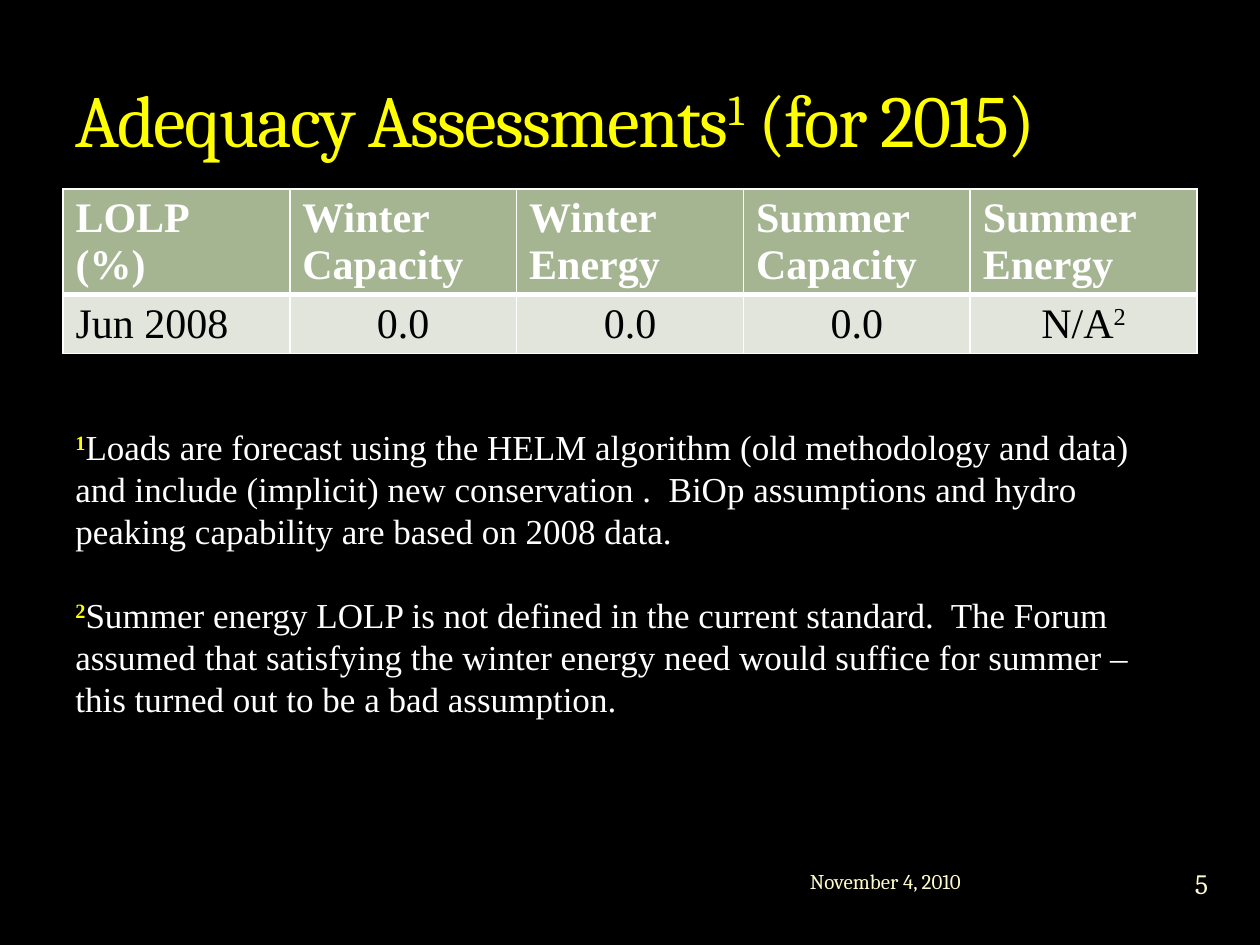
from dataclasses import dataclass

from lxml.etree import SubElement
from pptx import Presentation
from pptx.dml.color import RGBColor
from pptx.enum.text import MSO_ANCHOR, MSO_AUTO_SIZE, PP_ALIGN
from pptx.oxml import parse_xml
from pptx.oxml.ns import nsdecls, qn
from pptx.util import Inches, Pt


@dataclass(frozen=True)
class Theme:
    back: str = "000000"
    white: str = "FFFFFF"
    gold: str = "FFFF00"
    cream: str = "FEFAC9"
    head: str = "A5B592"
    band: str = "E1E5DC"
    serif: str = "Times New Roman"
    sans: str = "Cambria"
    title: int = 42
    cell: int = 24
    note: int = 20
    page: int = 16
    date: int = 12


@dataclass(frozen=True)
class Style:
    face: str
    size: int
    color: str
    bold: bool = False


@dataclass(frozen=True)
class Box:
    left: float
    top: float
    width: float
    height: float

    def spans(self) -> list:
        return [Inches(n) for n in (self.left, self.top, self.width, self.height)]


@dataclass(frozen=True)
class Note:
    mark: str
    text: str


THEME = Theme()
HEADS = ["LOLP\n(%)", "Winter Capacity", "Winter Energy", "Summer Capacity", "Summer Energy"]
VALUES = ["Jun 2008", "0.0", "0.0", "0.0", "N/A"]
NOTES = [
    Note("1", "Loads are forecast using the HELM algorithm (old methodology and data) "
              "and include (implicit) new conservation .  BiOp assumptions and hydro "
              "peaking capability are based on 2008 data."),
    Note("2", "Summer energy LOLP is not defined in the current standard.  The Forum "
              "assumed that satisfying the winter energy need would suffice for summer – "
              "this turned out to be a bad assumption."),
]


def paint(font, style: Style) -> None:
    font.name = style.face
    font.size = Pt(style.size)
    font.bold = style.bold
    font.color.rgb = RGBColor.from_string(style.color)


def add_run(para, text: str, raised: bool = False):
    run = para.add_run()
    run.text = text
    if raised:
        run._r.get_or_add_rPr().set("baseline", "30000")
    return run


def add_box(slide, box: Box, grow: bool = False):
    frame = slide.shapes.add_textbox(*box.spans()).text_frame
    frame.word_wrap = True
    if grow:
        frame.auto_size = MSO_AUTO_SIZE.SHAPE_TO_FIT_TEXT
    else:
        frame.vertical_anchor = MSO_ANCHOR.MIDDLE
    return frame


def edge(cell, widths: dict) -> None:
    props = cell._tc.get_or_add_tcPr()
    for spot, (side, width) in enumerate(widths.items()):
        line = parse_xml(f'<a:ln{side} {nsdecls("a")} w="{Pt(width)}"/>')
        fill = SubElement(line, qn("a:solidFill"))
        SubElement(fill, qn("a:srgbClr"), val=THEME.white)
        props.insert(spot, line)


def draw_title(slide) -> None:
    title = slide.shapes.title
    title.left, title.top, title.width, title.height = Box(0.5, 0.42, 9, 0.92).spans()
    frame = title.text_frame
    frame.auto_size = MSO_AUTO_SIZE.NONE
    frame.vertical_anchor = MSO_ANCHOR.BOTTOM
    para = frame.paragraphs[0]
    para.alignment = PP_ALIGN.LEFT
    paint(para.font, Style(THEME.sans, THEME.title, THEME.gold))
    for text, raised in (("Adequacy Assessments", False), ("1", True), (" (for 2015)", False)):
        run = add_run(para, text, raised)
        run._r.get_or_add_rPr().set("spc", "-100")


def draw_table(slide) -> None:
    table = slide.shapes.add_table(2, len(HEADS), *Box(0.5, 1.5, 9, 1.28).spans()).table
    for row, height in zip(table.rows, (0.82, 0.46)):
        row.height = Inches(height)
    head = Style(THEME.serif, THEME.cell, THEME.white, True)
    body = Style(THEME.serif, THEME.cell, THEME.back)
    looks = (
        (HEADS, head, THEME.head, {"L": 1, "R": 1, "T": 1, "B": 3}),
        (VALUES, body, THEME.band, {"L": 1, "R": 1, "T": 3, "B": 1}),
    )
    for row, (texts, style, fill, widths) in enumerate(looks):
        for col, text in enumerate(texts):
            cell = table.cell(row, col)
            cell.text = text
            cell.fill.solid()
            cell.fill.fore_color.rgb = RGBColor.from_string(fill)
            edge(cell, widths)
            for para in cell.text_frame.paragraphs:
                paint(para.font, style)
                if row and col:
                    para.alignment = PP_ALIGN.CENTER
    last = table.cell(1, len(VALUES) - 1).text_frame.paragraphs[0]
    add_run(last, "2", True)


def draw_notes(slide) -> None:
    frame = add_box(slide, Box(0.5, 3.33, 9, 2.46), grow=True)
    for spot, note in enumerate(NOTES):
        para = frame.add_paragraph() if spot else frame.paragraphs[0]
        para.space_before = Pt(24 if spot else 0)
        mark = add_run(para, note.mark, True)
        paint(mark.font, Style(THEME.serif, THEME.note, THEME.gold, True))
        text = add_run(para, note.text)
        paint(text.font, Style(THEME.serif, THEME.note, THEME.white))


def draw_foot(slide) -> None:
    date = add_box(slide, Box(6.33, 6.78, 2.83, 0.42)).paragraphs[0]
    add_run(date, "November 4, 2010")
    paint(date.font, Style(THEME.sans, THEME.date, THEME.cream))
    frame = add_box(slide, Box(9.2, 6.76, 0.67, 0.5))
    frame.margin_left = frame.margin_right = frame.margin_top = frame.margin_bottom = 0
    page = frame.paragraphs[0]
    page.alignment = PP_ALIGN.CENTER
    add_run(page, "5")
    paint(page.font, Style(THEME.sans, THEME.page, THEME.cream))


def main() -> None:
    deck = Presentation()
    deck.slide_width, deck.slide_height = Inches(10), Inches(7.5)
    slide = deck.slides.add_slide(deck.slide_layouts[5])
    slide.background.fill.solid()
    slide.background.fill.fore_color.rgb = RGBColor.from_string(THEME.back)
    draw_table(slide)
    draw_foot(slide)
    draw_title(slide)
    draw_notes(slide)
    deck.save("out.pptx")


if __name__ == "__main__":
    main()
